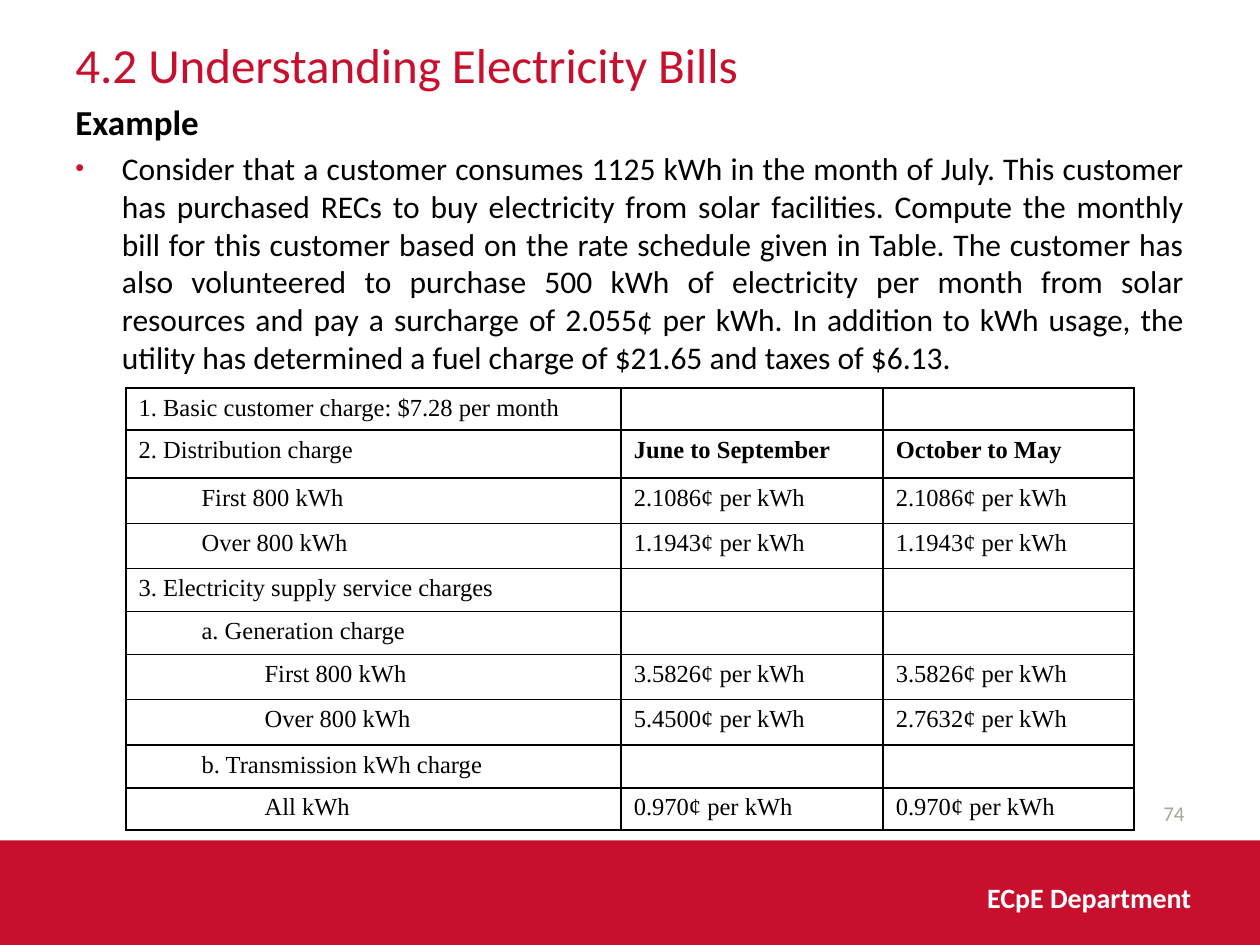
"""Build the electricity bill example slide with its rate schedule."""
from lxml import etree
from pptx import Presentation
from pptx.dml.color import RGBColor
from pptx.enum import shapes, text
from pptx.oxml import ns
from pptx.util import Inches, Pt

RED = RGBColor(0xC8, 0x10, 0x2E)
BLACK = RGBColor(0, 0, 0)
WHITE = RGBColor(255, 255, 255)
GREY = RGBColor(0xAC, 0xA3, 0x9A)
SANS, SERIF = "Calibri", "Times New Roman"
LEFT, RIGHT, MID = text.PP_ALIGN.LEFT, text.PP_ALIGN.RIGHT, text.PP_ALIGN.CENTER

LABELS = [
    ((0.5, 0.17, 9, 0.68), "4.2 Understanding Electricity Bills", 28, RED, False, LEFT),
    ((7.17, 6.25, 2.33, 0.4), "74", 12, GREY, False, RIGHT),
    ((7.69, 6.92, 1.91, 0.4), "ECpE Department", 16, WHITE, True, MID),
]
HEAD = "Example"
TASK = (
    "Consider that a customer consumes 1125 kWh in the month of July. "
    "This customer has purchased RECs to buy electricity from solar facilities. "
    "Compute the monthly bill for this customer based on the rate schedule given in Table. "
    "The customer has also volunteered to purchase 500 kWh of electricity per month "
    "from solar resources and pay a surcharge of 2.055¢ per kWh. "
    "In addition to kWh usage, the utility has determined a fuel charge of $21.65 "
    "and taxes of $6.13."
)
COLS = [3.93, 2.08, 1.99]
RATES = [
    (0.32, 0, "1. Basic customer charge: $7.28 per month", "", ""),
    (0.38, 0, "2. Distribution charge", "June to September", "October to May"),
    (0.36, 1, "First 800 kWh", "2.1086¢ per kWh", "2.1086¢ per kWh"),
    (0.36, 1, "Over 800 kWh", "1.1943¢ per kWh", "1.1943¢ per kWh"),
    (0.34, 0, "3. Electricity supply service charges", "", ""),
    (0.34, 1, "a. Generation charge", "", ""),
    (0.36, 2, "First 800 kWh", "3.5826¢ per kWh", "3.5826¢ per kWh"),
    (0.36, 2, "Over 800 kWh", "5.4500¢ per kWh", "2.7632¢ per kWh"),
    (0.34, 1, "b. Transmission kWh charge", "", ""),
    (0.32, 2, "All kWh", "0.970¢ per kWh", "0.970¢ per kWh"),
]
MONTHS = 1


def add_tag(root, tag, **attrs):
    return etree.SubElement(root, ns.qn(tag), attrs)


def add_run(para, words, size, color, bold=False, face=SANS):
    run = para.add_run()
    run.text = words
    font = run.font
    font.name, font.size, font.bold = face, Pt(size), bold
    font.color.rgb = color


def add_box(slide, place, anchor):
    frame = slide.shapes.add_textbox(*map(Inches, place)).text_frame
    frame.word_wrap = True
    frame.vertical_anchor = anchor
    return frame


def indent(para, left, first=0):
    props = para._p.get_or_add_pPr()
    props.set("marL", str(Inches(left)))
    props.set("indent", str(Inches(first)))
    return props


def add_body(slide):
    frame = add_box(slide, (0.5, 0.75, 9, 2.33), text.MSO_ANCHOR.TOP)
    add_run(frame.paragraphs[0], HEAD, 20, BLACK, True)
    para = frame.add_paragraph()
    para.alignment = text.PP_ALIGN.JUSTIFY
    para.space_before = Pt(3.6)
    props = indent(para, 0.37, -0.37)
    add_tag(add_tag(props, "a:buClr"), "a:srgbClr", val="CE1126")
    add_tag(props, "a:buSzPct", val="80000")
    add_tag(props, "a:buFont", typeface="Arial")
    add_tag(props, "a:buChar", char="•")
    add_run(para, TASK, 18, BLACK)


def add_edges(cell):
    props = cell._tc.get_or_add_tcPr()
    for side in ("a:lnL", "a:lnR", "a:lnT", "a:lnB"):
        line = add_tag(props, side, w=str(Pt(1)))
        add_tag(add_tag(line, "a:solidFill"), "a:srgbClr", val=str(BLACK))
    cell.fill.background()


def add_rates(slide):
    high = sum(row[0] for row in RATES)
    place = map(Inches, (1, 3.08, sum(COLS), high))
    table = slide.shapes.add_table(len(RATES), len(COLS), *place).table
    table.first_row = table.horz_banding = False
    for col, wide in zip(table.columns, COLS):
        col.width = Inches(wide)
    for r, (tall, level, *words) in enumerate(RATES):
        table.rows[r].height = Inches(tall)
        for c, word in enumerate(words):
            cell = table.cell(r, c)
            add_edges(cell)
            para = cell.text_frame.paragraphs[0]
            if c == 0 and level:
                para.level = level
                indent(para, level * 0.5)
            if word:
                add_run(para, word, 14, BLACK, r == MONTHS and c > 0, SERIF)
            else:
                add_tag(para._p, "a:endParaRPr", sz="1400")


def main():
    deck = Presentation()
    deck.slide_width, deck.slide_height = Inches(10), Inches(7.5)
    slide = deck.slides.add_slide(deck.slide_layouts[6])
    band = slide.shapes.add_shape(
        shapes.MSO_SHAPE.RECTANGLE, *map(Inches, (0, 6.67, 10, 0.83)))
    band.shadow.inherit = False
    band.fill.solid()
    band.fill.fore_color.rgb = RED
    band.line.fill.background()
    for place, words, size, color, bold, align in LABELS:
        para = add_box(slide, place, text.MSO_ANCHOR.MIDDLE).paragraphs[0]
        para.alignment = align
        add_run(para, words, size, color, bold)
    add_body(slide)
    add_rates(slide)
    deck.save("out.pptx")


if __name__ == "__main__":
    main()
